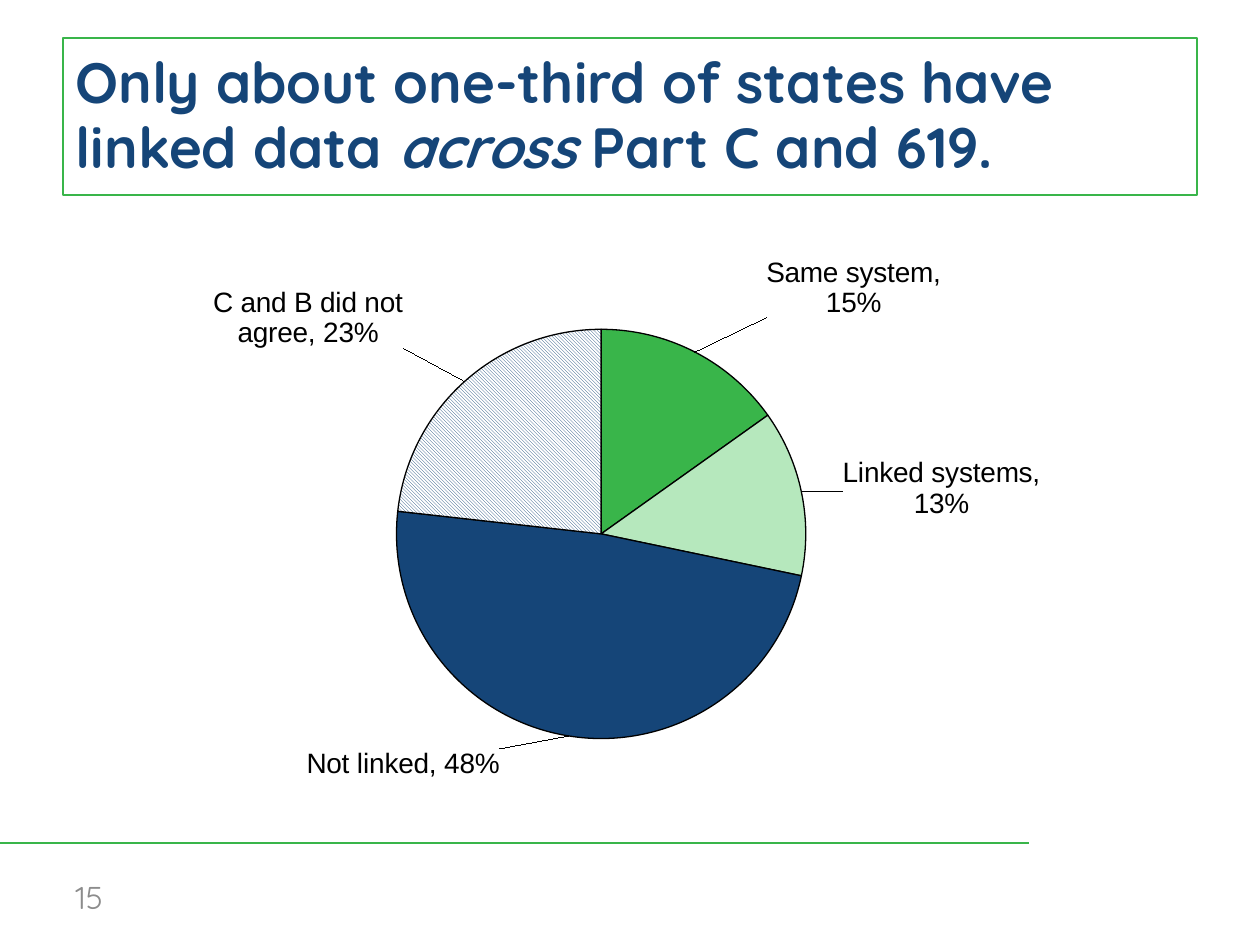
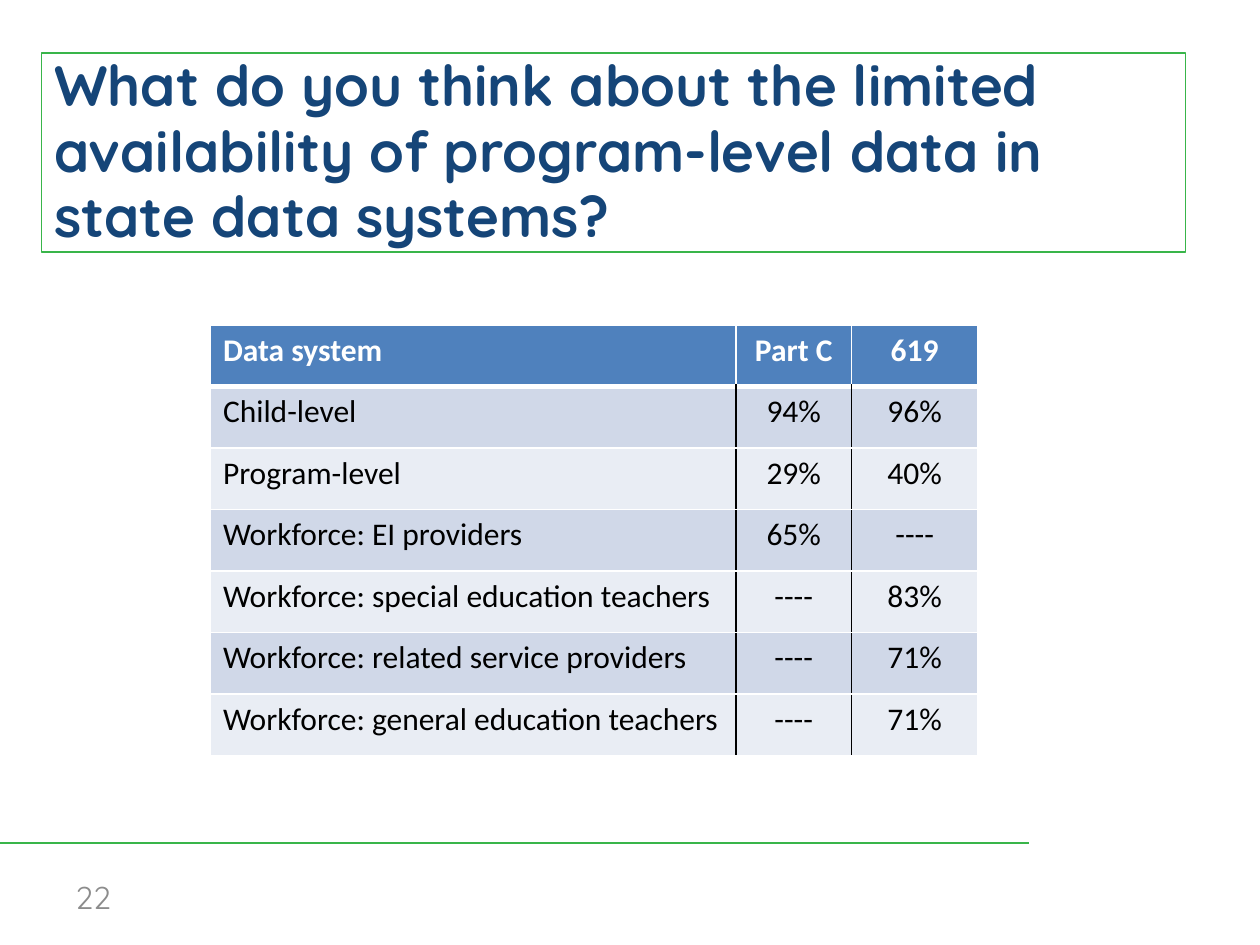
"""Build two slides on linked data and program-level data in state systems."""
from copy import deepcopy
from dataclasses import dataclass

from lxml.etree import SubElement
from pptx import Presentation
from pptx.chart.data import CategoryChartData
from pptx.dml.color import RGBColor
from pptx.enum.chart import XL_CHART_TYPE, XL_LABEL_POSITION
from pptx.enum.dml import MSO_PATTERN
from pptx.enum.shapes import MSO_CONNECTOR
from pptx.enum.text import MSO_ANCHOR, MSO_AUTO_SIZE, PP_ALIGN
from pptx.oxml.ns import qn
from pptx.util import Inches, Pt


@dataclass(frozen=True)
class Theme:
    green: str = "39B54A"
    pale_green: str = "B6E8BD"
    navy: str = "154578"
    grey: str = "8C8C8C"
    black: str = "000000"
    white: str = "FFFFFF"
    header: str = "4F81BD"
    bands: tuple = ("D0D8E8", "E9EDF4")
    display: str = "Quicksand"
    body: str = "Calibri"
    label: str = "Arial"
    title_size: float = 32.4
    body_size: float = 18
    label_size: float = 16


THEME = Theme()

LINKED = {
    "number": "15",
    "title": [("Only about one-third of states have linked data ", False),
              ("across", True), (" Part C and 619.", False)],
    "title_box": (0.5, 0.3, 9, 1.25),
    "chart_box": (0.42, 1.92, 9, 4.42),
    "plot": {"x": 0.229, "y": 0.157, "w": 0.509, "h": 0.735},
    "slices": [
        ("Same system", 15, THEME.green, (0.06, -0.05)),
        ("Linked systems", 13, THEME.pale_green, (0.03, 0.05)),
        ("Not linked", 48, THEME.navy, (-0.06, 0.01)),
        ("C and B did not agree", 23, None, (-0.05, -0.05)),
    ],
}

AVAILABILITY = {
    "number": "22",
    "title": [("What do you think about the limited availability of "
               "program-level data in state data systems?", False)],
    "title_box": (0.33, 0.42, 9.08, 1.58),
    "table_box": (1.67, 2.58, 6.08, 3.42),
    "columns": (4.17, 0.92, 1),
    "rows": [
        ("Data system", "Part C", "619"),
        ("Child-level", "94%", "96%"),
        ("Program-level", "29%", "40%"),
        ("Workforce: EI providers", "65%", "----"),
        ("Workforce: special education teachers", "----", "83%"),
        ("Workforce: related service providers", "----", "71%"),
        ("Workforce: general education teachers", "----", "71%"),
    ],
}


def inches(box):
    return [Inches(length) for length in box]


def rgb(color):
    return RGBColor.from_string(color)


def set_font(font, size, color, name, bold=False, italic=False):
    font.size, font.name = Pt(size), name
    font.bold, font.italic = bold, italic
    font.color.rgb = rgb(color)


def write(paragraph, text, align=PP_ALIGN.LEFT, **style):
    paragraph.alignment = align
    run = paragraph.add_run()
    run.text = text
    set_font(run.font, **style)


def add_page(deck, content):
    slide = deck.slides.add_slide(deck.slide_layouts[5])
    rule = slide.shapes.add_connector(MSO_CONNECTOR.STRAIGHT, *inches((0, 6.69, 8.17, 6.69)))
    rule.line.color.rgb, rule.line.width = rgb(THEME.green), Pt(1.5)
    SubElement(rule.element.spPr, qn("a:effectLst"))

    title = slide.shapes.title
    title.left, title.top, title.width, title.height = inches(content["title_box"])
    title.line.color.rgb, title.line.width = rgb(THEME.green), Pt(1)
    frame = title.text_frame
    frame.auto_size, frame.vertical_anchor = MSO_AUTO_SIZE.NONE, MSO_ANCHOR.MIDDLE
    frame.paragraphs[0].line_spacing = 0.96
    for text, italic in content["title"]:
        write(frame.paragraphs[0], text, size=THEME.title_size, color=THEME.navy,
              name=THEME.display, bold=True, italic=italic)

    number = slide.shapes.add_textbox(*inches((0.5, 6.92, 2.33, 0.4))).text_frame
    number.word_wrap, number.vertical_anchor = True, MSO_ANCHOR.MIDDLE
    write(number.paragraphs[0], content["number"], size=THEME.body_size,
          color=THEME.grey, name=THEME.display)
    return slide


def add_layout(parent, position, **settings):
    layout = SubElement(parent, qn("c:layout"))
    manual = SubElement(layout, qn("c:manualLayout"))
    for key, value in settings.items():
        SubElement(manual, qn(f"c:{key}"), val=value)
    for key, value in position.items():
        SubElement(manual, qn(f"c:{key}"), val=str(value))
    return layout


def label_slices(series, offsets):
    labels = series.data_labels
    labels.show_value = False
    labels.show_category_name = labels.show_percentage = True
    labels.number_format, labels.number_format_is_linked = "0%", False
    labels.position = XL_LABEL_POSITION.OUTSIDE_END
    set_font(labels.font, THEME.label_size, THEME.black, THEME.label)

    group = series.data_labels._element
    separator = SubElement(group, qn("c:separator"))
    separator.text = ", "
    leaders = group.find(qn("c:showLeaderLines"))
    if leaders is None:
        leaders = SubElement(group, qn("c:showLeaderLines"))
    leaders.set("val", "1")
    group.append(leaders)
    shared = [part for part in group if part is not leaders]
    for index, (x, y) in enumerate(offsets):
        label = SubElement(group, qn("c:dLbl"))
        SubElement(label, qn("c:idx"), val=str(index))
        add_layout(label, {"x": x, "y": y})
        label.extend(deepcopy(part) for part in shared)
        group.insert(index, label)


def add_pie(slide, content):
    names, values, colors, offsets = zip(*content["slices"])
    data = CategoryChartData()
    data.categories = names
    data.add_series("Series 1", values)
    chart = slide.shapes.add_chart(XL_CHART_TYPE.PIE, *inches(content["chart_box"]), data).chart
    chart.has_title = chart.has_legend = False
    set_font(chart.font, 10, THEME.black, THEME.body)
    chart.plots[0].vary_by_categories = True

    area = chart.element.chart.plotArea
    for old in area.findall(qn("c:layout")):
        area.remove(old)
    area.insert(0, add_layout(area, content["plot"], layoutTarget="inner",
                              xMode="edge", yMode="edge"))

    series = chart.plots[0].series[0]
    for index, color in enumerate(colors):
        style = series.points[index].format
        if color:
            style.fill.solid()
            style.fill.fore_color.rgb = rgb(color)
        else:
            style.fill.patterned()
            style.fill.pattern = MSO_PATTERN.DARK_DOWNWARD_DIAGONAL
            style.fill.fore_color.rgb = rgb(THEME.navy)
            style.fill.back_color.rgb = rgb(THEME.white)
        style.line.color.rgb, style.line.width = rgb(THEME.black), Pt(0.75)
    label_slices(series, offsets)


def set_borders(cell, **edges):
    properties = cell._tc.get_or_add_tcPr()
    for side, (color, width) in edges.items():
        line = SubElement(properties, qn(f"a:ln{side}"), w=str(Pt(width)))
        fill = SubElement(line, qn("a:solidFill"))
        SubElement(fill, qn("a:srgbClr"), val=color)


def add_systems_table(slide, content):
    rows, columns = content["rows"], content["columns"]
    table = slide.shapes.add_table(len(rows), len(columns), *inches(content["table_box"])).table
    for column, width in zip(table.columns, columns):
        column.width = Inches(width)
    for r, row in enumerate(rows):
        is_header = r == 0
        inner = THEME.white if is_header else THEME.black
        for c, text in enumerate(row):
            cell = table.cell(r, c)
            set_borders(cell,
                        L=(inner if c else THEME.white, 1),
                        R=(inner if c < len(columns) - 1 else THEME.white, 1),
                        T=(THEME.white, 3 if r == 1 else 1),
                        B=(THEME.white, 3 if is_header else 1))
            cell.fill.solid()
            cell.fill.fore_color.rgb = rgb(THEME.header if is_header else THEME.bands[(r - 1) % 2])
            write(cell.text_frame.paragraphs[0], text,
                  align=PP_ALIGN.CENTER if c else PP_ALIGN.LEFT,
                  size=THEME.body_size, name=THEME.body, bold=is_header,
                  color=THEME.white if is_header else THEME.black)


def main():
    deck = Presentation()
    deck.slide_width, deck.slide_height = Inches(10), Inches(7.5)
    add_pie(add_page(deck, LINKED), LINKED)
    add_systems_table(add_page(deck, AVAILABILITY), AVAILABILITY)
    deck.save("out.pptx")


if __name__ == "__main__":
    main()
